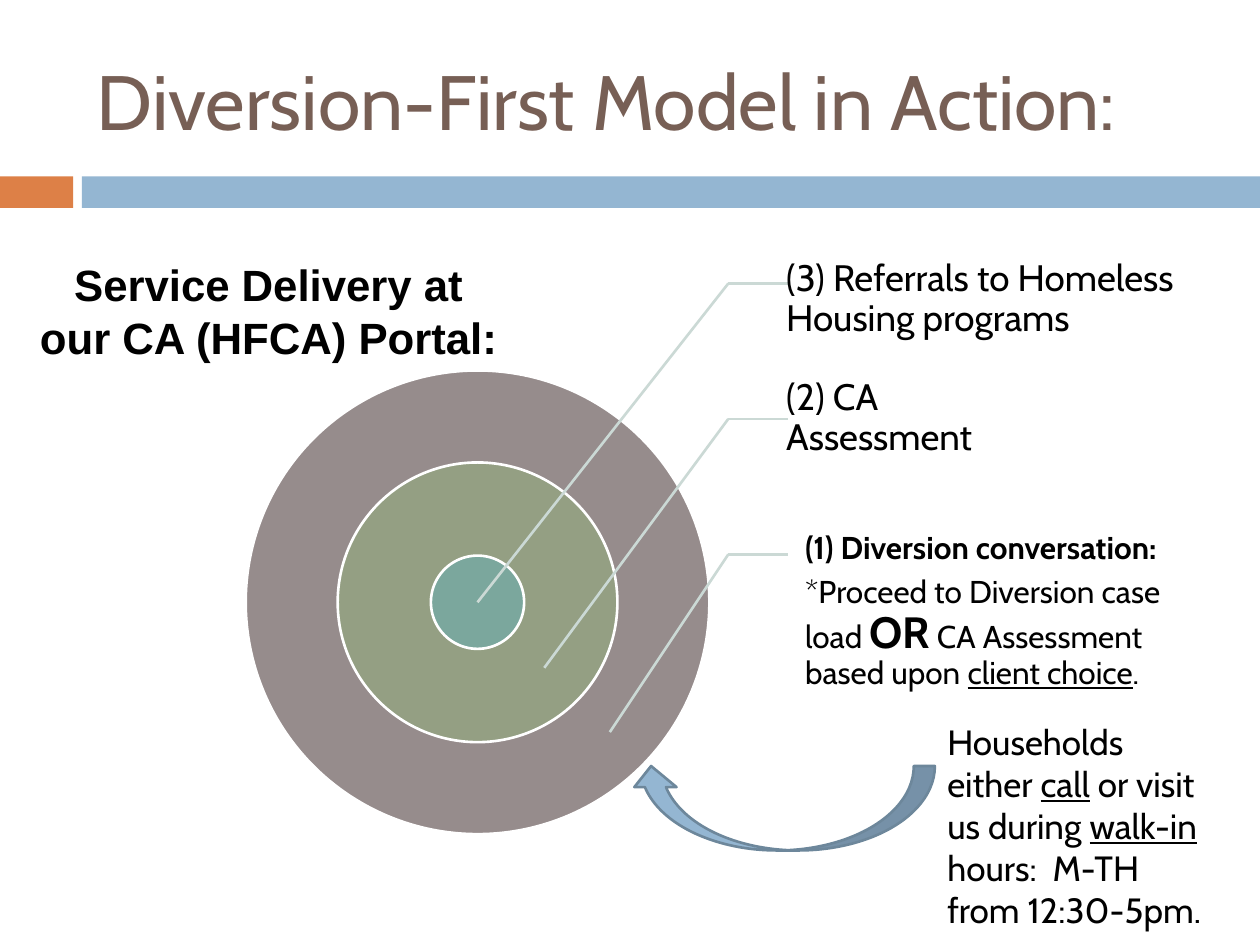
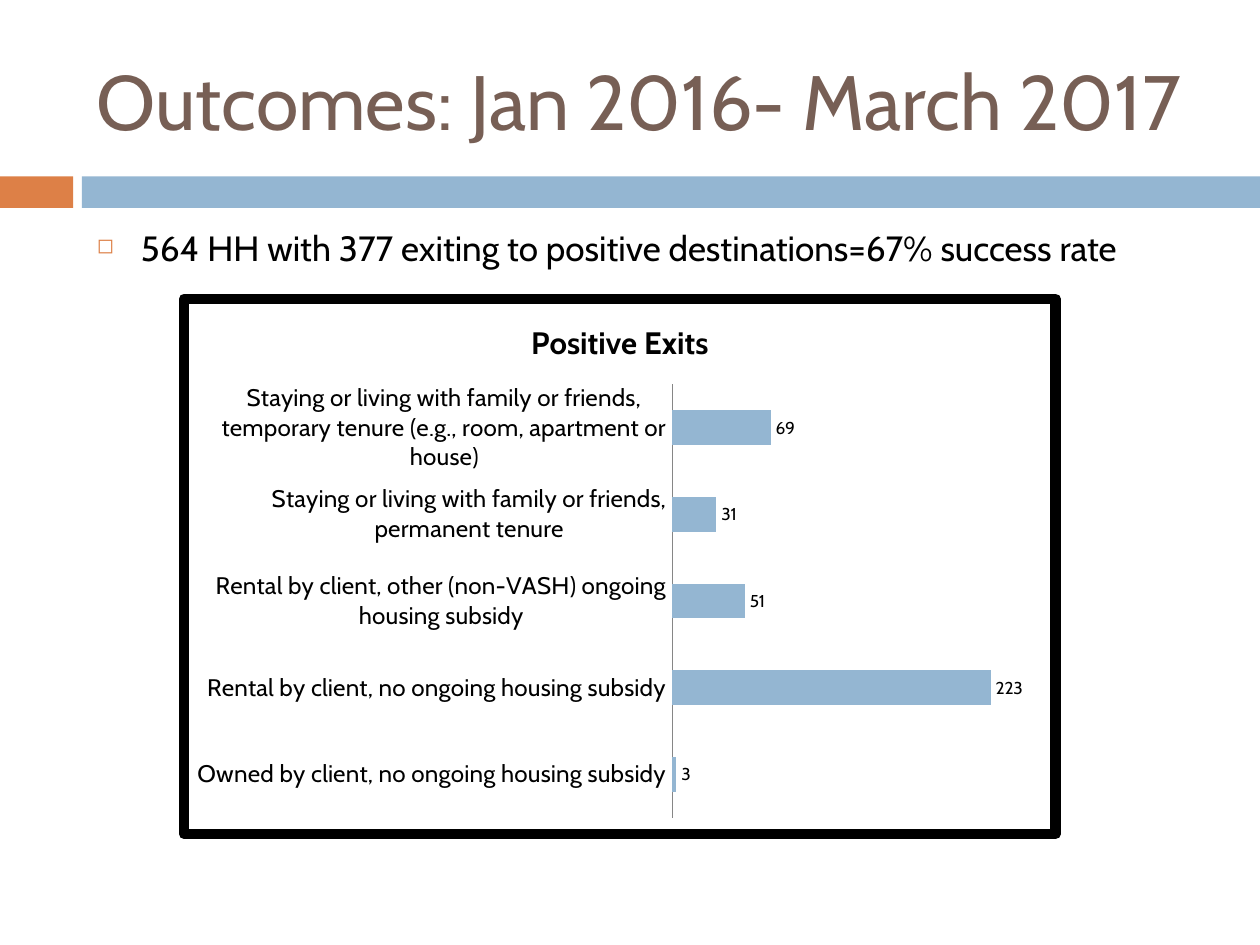
from lxml import etree
from pptx import Presentation
from pptx.chart.data import CategoryChartData
from pptx.dml.color import RGBColor
from pptx.enum.chart import XL_CHART_TYPE, XL_LABEL_POSITION, XL_TICK_MARK
from pptx.enum.shapes import MSO_CONNECTOR, MSO_SHAPE
from pptx.enum.text import MSO_ANCHOR, PP_ALIGN
from pptx.oxml import parse_xml
from pptx.oxml.ns import nsdecls, qn
from pptx.util import Inches, Pt

BAR = XL_CHART_TYPE.BAR_CLUSTERED
OUTSIDE = XL_LABEL_POSITION.OUTSIDE_END
NO_TICK = XL_TICK_MARK.NONE
STRAIGHT = MSO_CONNECTOR.STRAIGHT
RECTANGLE, OVAL = MSO_SHAPE.RECTANGLE, MSO_SHAPE.OVAL
CURVED_ARROW = MSO_SHAPE.CURVED_UP_ARROW
TOP, MIDDLE = MSO_ANCHOR.TOP, MSO_ANCHOR.MIDDLE
CENTER = PP_ALIGN.CENTER

COLORS = {
    "title": "775F55", "text": "000000", "white": "FFFFFF",
    "orange": "DD8047", "blue": "94B6D2", "arrow_edge": "6D879B",
    "outer": "968C8C", "middle": "949F83", "inner": "7BA79D",
    "leader": "CBD9D5", "axis": "868686",
}
FONT = "Cabin"
DEFAULT_INSETS = (0.1, 0.05, 0.1, 0.05)
BOLD, UNDERLINE = {"bold": True}, {"underline": True}


def color(name):
    return RGBColor.from_string(COLORS[name])


def apply(target, values):
    for name, value in values.items():
        setattr(target, name, value)


class Deck:
    """Holds the shared style and the slide being filled."""

    def __init__(self):
        self.presentation = Presentation()
        self.presentation.slide_width = Inches(10)
        self.presentation.slide_height = Inches(7.5)
        self.slide = None

    def new_slide(self, title):
        blank = self.presentation.slide_layouts[6]
        self.slide = self.presentation.slides.add_slide(blank)
        self.shape(RECTANGLE, (0, 1.4, 0.58, 0.25), "orange")
        self.shape(RECTANGLE, (0.65, 1.4, 9.35, 0.25), "blue")
        self.text((0.67, 0.25, 8.92, 1.08), [title], 44,
                  color_name="title", anchor=MIDDLE)

    def shape(self, kind, box, fill, line=None):
        shape = self.slide.shapes.add_shape(kind, *map(Inches, box))
        shape.shadow.inherit = False
        shape.fill.solid()
        shape.fill.fore_color.rgb = color(fill)
        if line:
            shape.line.color.rgb = color(line)
            shape.line.width = Pt(1.5)
        else:
            shape.line.fill.background()
        return shape

    def line(self, start, end):
        connector = self.slide.shapes.add_connector(
            STRAIGHT, *map(Inches, (*start, *end)))
        connector.line.color.rgb = color("leader")
        connector.line.width = Pt(1.5)
        etree.SubElement(connector._element.spPr, qn("a:effectLst"))

    def text(self, box, paragraphs, size, font=FONT, color_name="text",
             anchor=TOP, insets=DEFAULT_INSETS, run_format=None, **spacing):
        """A paragraph is a string or a list of strings and (string, format) pairs."""
        frame = self.slide.shapes.add_textbox(*map(Inches, box)).text_frame
        left, top, right, bottom = map(Inches, insets)
        apply(frame, {"word_wrap": True, "vertical_anchor": anchor,
                      "margin_left": left, "margin_top": top,
                      "margin_right": right, "margin_bottom": bottom})
        for index, runs in enumerate(paragraphs):
            paragraph = frame.add_paragraph() if index else frame.paragraphs[0]
            apply(paragraph, spacing)
            for part in [runs] if isinstance(runs, str) else runs:
                words, extra = (part, {}) if isinstance(part, str) else part
                run = paragraph.add_run()
                run.text = words
                run.font.color.rgb = color(color_name)
                apply(run.font, {"name": font, "size": Pt(size),
                                 **(run_format or {}), **extra})
        return frame

    def bullet(self, box, words, size):
        frame = self.text(box, [words], size, space_before=Pt(7))
        properties = frame.paragraphs[0]._p.get_or_add_pPr()
        properties.set("marL", str(Inches(0.35)))
        properties.set("indent", str(-Inches(0.35)))
        bullet_color = etree.SubElement(properties, qn("a:buClr"))
        etree.SubElement(bullet_color, qn("a:srgbClr"), val=COLORS["orange"])
        etree.SubElement(properties, qn("a:buSzPct"), val="60000")
        etree.SubElement(properties, qn("a:buChar"), char="◻")

    def bar_chart(self, box, title, values, plot_area):
        data = CategoryChartData()
        data.categories = values.keys()
        data.add_series("Series 1", values.values())
        chart = self.slide.shapes.add_chart(BAR, *map(Inches, box), data).chart
        chart.has_legend = False
        chart.has_title = True
        chart.chart_title.text_frame.text = title
        chart.chart_title.include_in_layout = False
        title_font = chart.chart_title.text_frame.paragraphs[0].runs[0].font
        for font, size, bold in ((chart.font, 10, False), (title_font, 18, True),
                                 (chart.category_axis.tick_labels.font, 14, False)):
            apply(font, {"name": FONT, "size": Pt(size), "bold": bold})
            font.color.rgb = color("text")
        apply(chart.category_axis, {"major_tick_mark": NO_TICK,
                                    "has_major_gridlines": False})
        chart.category_axis.format.line.color.rgb = color("axis")
        apply(chart.value_axis, {"visible": False, "has_major_gridlines": False,
                                 "minimum_scale": 0, "maximum_scale": 250})
        plot = chart.plots[0]
        apply(plot, {"gap_width": 150, "overlap": -25,
                     "vary_by_categories": False, "has_data_labels": True})
        apply(plot.data_labels, {"show_value": True, "position": OUTSIDE})
        fill = plot.series[0].format.fill
        fill.solid()
        fill.fore_color.rgb = color("blue")
        self.place_plot(chart, plot_area)
        self.frame_chart(chart)

    def place_plot(self, chart, plot_area):
        """Set the inner plot area as fractions of the chart."""
        sizes = "".join(f'<c:{name} val="{value}"/>'
                        for name, value in zip("xywh", plot_area))
        area = chart._chartSpace.chart.plotArea
        for layout in area.findall(qn("c:layout")):
            area.remove(layout)
        area.insert(0, parse_xml(
            f'<c:layout {nsdecls("c")}><c:manualLayout>'
            '<c:layoutTarget val="inner"/><c:xMode val="edge"/>'
            f'<c:yMode val="edge"/>{sizes}</c:manualLayout></c:layout>'))

    def frame_chart(self, chart):
        chart._chartSpace.chart.addnext(parse_xml(
            f'<c:spPr {nsdecls("c", "a")}><a:solidFill>'
            f'<a:srgbClr val="{COLORS["white"]}"/></a:solidFill>'
            f'<a:ln w="{Pt(6)}"><a:solidFill><a:srgbClr val="{COLORS["text"]}"/>'
            '</a:solidFill><a:round/></a:ln></c:spPr>'))


def add_model_slide(deck):
    deck.new_slide("Diversion-First Model in Action:")

    center_x, center_y = 3.79, 4.78
    for radius, fill in ((1.84, "outer"), (1.11, "middle"), (0.37, "inner")):
        deck.shape(OVAL, (center_x - radius, center_y - radius,
                          2 * radius, 2 * radius), fill, "white")

    bend_x, label_x = 5.78, 6.25
    for level, target in enumerate(((center_x, center_y), (4.32, 5.3), (4.84, 5.81))):
        bend = (bend_x, 2.25 + 1.075 * level)
        deck.line(bend, (label_x, bend[1]))
        deck.line(bend, target)

    label_style = {"anchor": MIDDLE, "line_spacing": 0.9, "space_after": Pt(6)}
    for box, words in (
            ((6.08, 1.92, 3.27, 0.91), "(3) Referrals to Homeless Housing programs"),
            ((6.08, 2.78, 2.17, 1.08), "(2) CA Assessment")):
        deck.text(box, [words], 21, insets=(0.16, 0.03, 0.03, 0.03), **label_style)
    deck.text((6.25, 4, 3.16, 1.71), [
        [("(1) Diversion conversation:", BOLD)],
        ["*Proceed to Diversion case load ", ("OR", {"size": Pt(25), **BOLD}),
         " CA Assessment based upon ", ("client choice", UNDERLINE), "."],
    ], 18, insets=(0.14, 0.03, 0.03, 0.03), **label_style)

    deck.text((0.17, 2, 3.92, 0.94), ["Service Delivery at our CA (HFCA) Portal:"],
              25, font="Arial", run_format=BOLD, alignment=CENTER)
    arrow = deck.shape(CURVED_ARROW, (5, 6.08, 2.42, 0.67), "blue", "arrow_edge")
    arrow._element.spPr.xfrm.set("flipH", "1")
    deck.text((7.42, 5.67, 2.33, 1.78), [
        ["Households either ", ("call", UNDERLINE), " or visit us during ",
         ("walk-in", UNDERLINE), " hours:  M-TH from 12:30-5pm."]], 20)


def add_outcomes_slide(deck):
    deck.new_slide("Outcomes: Jan 2016- March 2017")
    deck.bullet((0.67, 1.75, 8.92, 5.5),
                "564 HH with 377 exiting to positive destinations=67% success rate", 20)
    exits = {
        "Owned by client, no ongoing housing subsidy": 3,
        "Rental by client, no ongoing housing subsidy": 223,
        "Rental by client, other (non-VASH) ongoing housing subsidy": 51,
        "Staying or living with family or friends, permanent tenure": 31,
        "Staying or living with family or friends, temporary tenure "
        "(e.g., room, apartment or house)": 69,
    }
    deck.bar_chart((1.42, 2.33, 7, 4.33), "Positive Exits", exits,
                   plot_area=(0.56, 0.16, 0.41, 0.81))


def main():
    deck = Deck()
    add_model_slide(deck)
    add_outcomes_slide(deck)
    deck.presentation.save("out.pptx")


if __name__ == "__main__":
    main()
